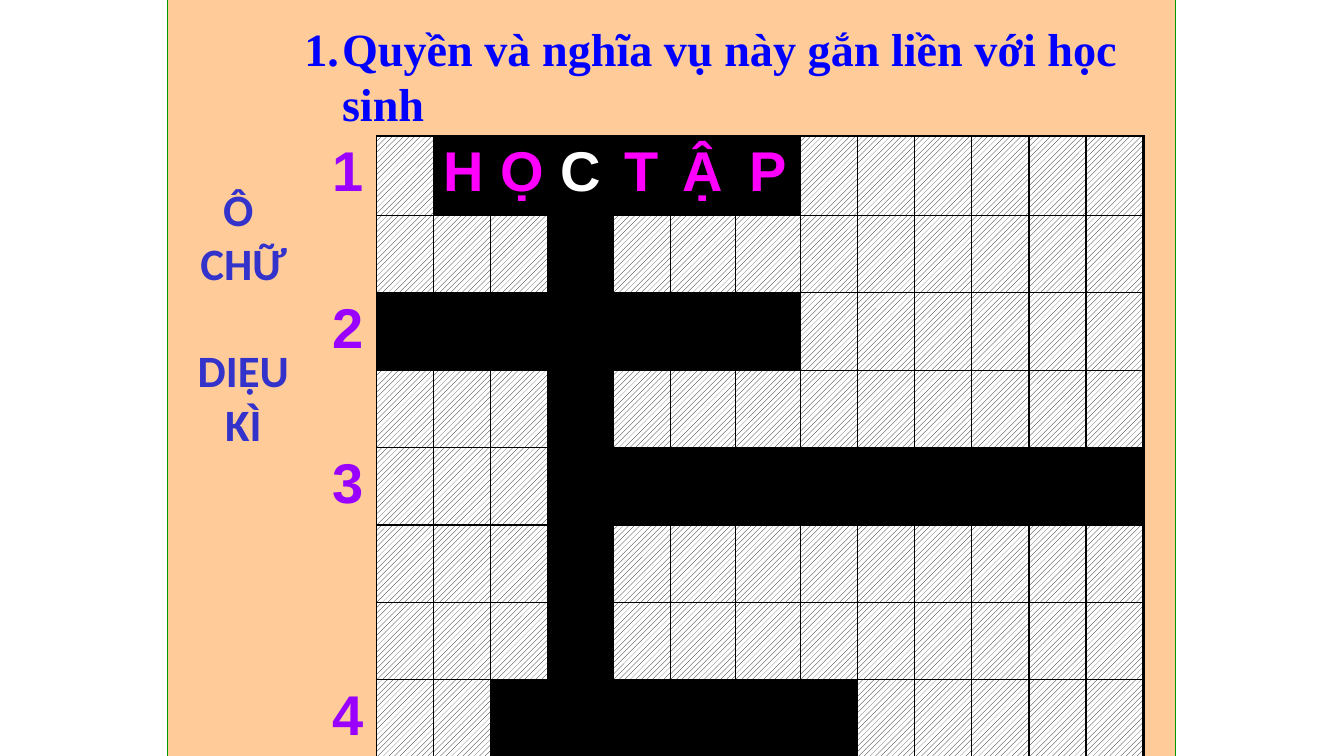
import pptx
import pptx.util
import pptx.dml.color
import pptx.enum.dml
import pptx.enum.shapes
import pptx.enum.text
import pptx.oxml
import pptx.oxml.ns

Cm, Pt = pptx.util.Cm, pptx.util.Pt
RGB = pptx.dml.color.RGBColor.from_string
MID = pptx.enum.text.PP_ALIGN.CENTER

CLUE = "Quyền và nghĩa vụ này gắn liền với học sinh"
SIDE = ["Ô ", "CHỮ", " DIỆU", "KÌ"]
# Row number, then squares: "/" is hatched, "#" is black, a letter is solved.
GRID = [
    ("1", "/HỌCTẬP//////"),
    ("", "///#/////////"),
    ("2", "#######//////"),
    ("", "///#/////////"),
    ("3", "///##########"),
    ("", "///#/////////"),
    ("", "///#/////////"),
    ("4", "//######/////"),
]
KEY = 4  # column of the hidden word
WIDE = (4, 6, 7)

THEME = {
    "page": "FFCC99", "edge": "009900", "ink": "000000", "paper": "FFFFFF",
    "num": "9900FF", "word": "FF00FF", "key": "FFFFFF",
    "side": "3333CC", "clue": "0000FF",
    "cell_pt": 40, "side_pt": 32, "clue_pt": 33,
    "thin": 1, "thick": 2.25,
    "cell_font": "Arial", "side_font": "Calibri", "clue_font": "Times New Roman",
}


def style(para, kind, hue):
    font = para.runs[0].font
    font.name, font.size = THEME[kind + "_font"], Pt(THEME[kind + "_pt"])
    font.bold = True
    font.color.rgb = RGB(THEME[hue])


def paint(cell, mark, col):
    fill = cell.fill
    if mark == "/":
        fill.patterned()
        fill.pattern = pptx.enum.dml.MSO_PATTERN.WIDE_UPWARD_DIAGONAL
        fill.fore_color.rgb = RGB(THEME["ink"])
        fill.back_color.rgb = RGB(THEME["paper"])
    else:
        fill.solid()
        fill.fore_color.rgb = RGB(THEME["page" if col == 0 else "ink"])


def border(cell, sides):
    """Draw the given sides, a dict of L, R, T, B to points, before the fill."""
    props = cell._tc.get_or_add_tcPr()
    space = pptx.oxml.ns.nsdecls("a")
    for spot, side in enumerate("LRTB"):
        width = sides.get(side, 0)
        ink = (f'<a:solidFill><a:srgbClr val="{THEME["ink"]}"/></a:solidFill>'
               if width else "<a:noFill/>")
        props.insert(spot, pptx.oxml.parse_xml(
            f'<a:ln{side} {space} w="{int(Pt(width))}">{ink}</a:ln{side}>'))


def edges(row, col):
    thin, thick = THEME["thin"], THEME["thick"]
    if col == 0:
        return {"R": thin}
    return {
        "L": thin,
        "R": thick if col == len(GRID[0][1]) else thin,
        "T": thick if row == 0 else thin,
        "B": thick if row == len(GRID) - 1 else thin,
    }


def add_page(slide):
    page = slide.shapes.add_shape(pptx.enum.shapes.MSO_SHAPE.RECTANGLE,
                                  Cm(4.23), Cm(-0.2), Cm(25.4), Cm(19.94))
    page.shadow.inherit = False
    page.fill.solid()
    page.fill.fore_color.rgb = RGB(THEME["page"])
    page.line.color.rgb = RGB(THEME["edge"])
    page.line.width = Pt(0.75)


def add_grid(slide):
    cols = len(GRID[0][1]) + 1
    table = slide.shapes.add_table(len(GRID), cols, Cm(8.05), Cm(3.43),
                                   Cm(20.76), Cm(15.65)).table
    table.first_row = table.horz_banding = False
    for col in range(cols):
        table.columns[col].width = Cm(1.64 if col in WIDE else 1.44)
    for row, (num, marks) in enumerate(GRID):
        table.rows[row].height = Cm(2 if row == 0 else 1.95)
        for col, mark in enumerate([num, *marks]):
            cell = table.cell(row, col)
            paint(cell, mark, col)
            border(cell, edges(row, col))
            if mark and mark not in "/#":
                cell.text_frame.text = mark
                para = cell.text_frame.paragraphs[0]
                para.alignment = MID
                hue = {0: "num", KEY: "key"}.get(col, "word")
                style(para, "cell", hue)


def add_side(slide):
    frame = slide.shapes.add_textbox(Cm(4.65), Cm(4.45), Cm(2.97), Cm(13.54)).text_frame
    frame.word_wrap = False
    frame.text = "\n".join(SIDE)
    for para in frame.paragraphs:
        para.alignment = MID
        style(para, "side", "side")


def add_clue(slide):
    frame = slide.shapes.add_textbox(Cm(7.42), Cm(0.38), Cm(22.23), Cm(3.05)).text_frame
    frame.word_wrap = True
    frame.text = CLUE
    para = frame.paragraphs[0]
    style(para, "clue", "clue")
    props = para._p.get_or_add_pPr()
    props.set("marL", str(int(Cm(0.95))))
    props.set("indent", str(int(Cm(-0.95))))
    props.append(pptx.oxml.parse_xml(
        f'<a:buAutoNum {pptx.oxml.ns.nsdecls("a")} type="arabicPeriod"/>'))


def main():
    deck = pptx.Presentation()
    deck.slide_width, deck.slide_height = Cm(33.87), Cm(19.05)
    slide = deck.slides.add_slide(deck.slide_layouts[6])
    add_page(slide)
    add_grid(slide)
    add_side(slide)
    add_clue(slide)
    deck.save("out.pptx")


if __name__ == "__main__":
    main()
